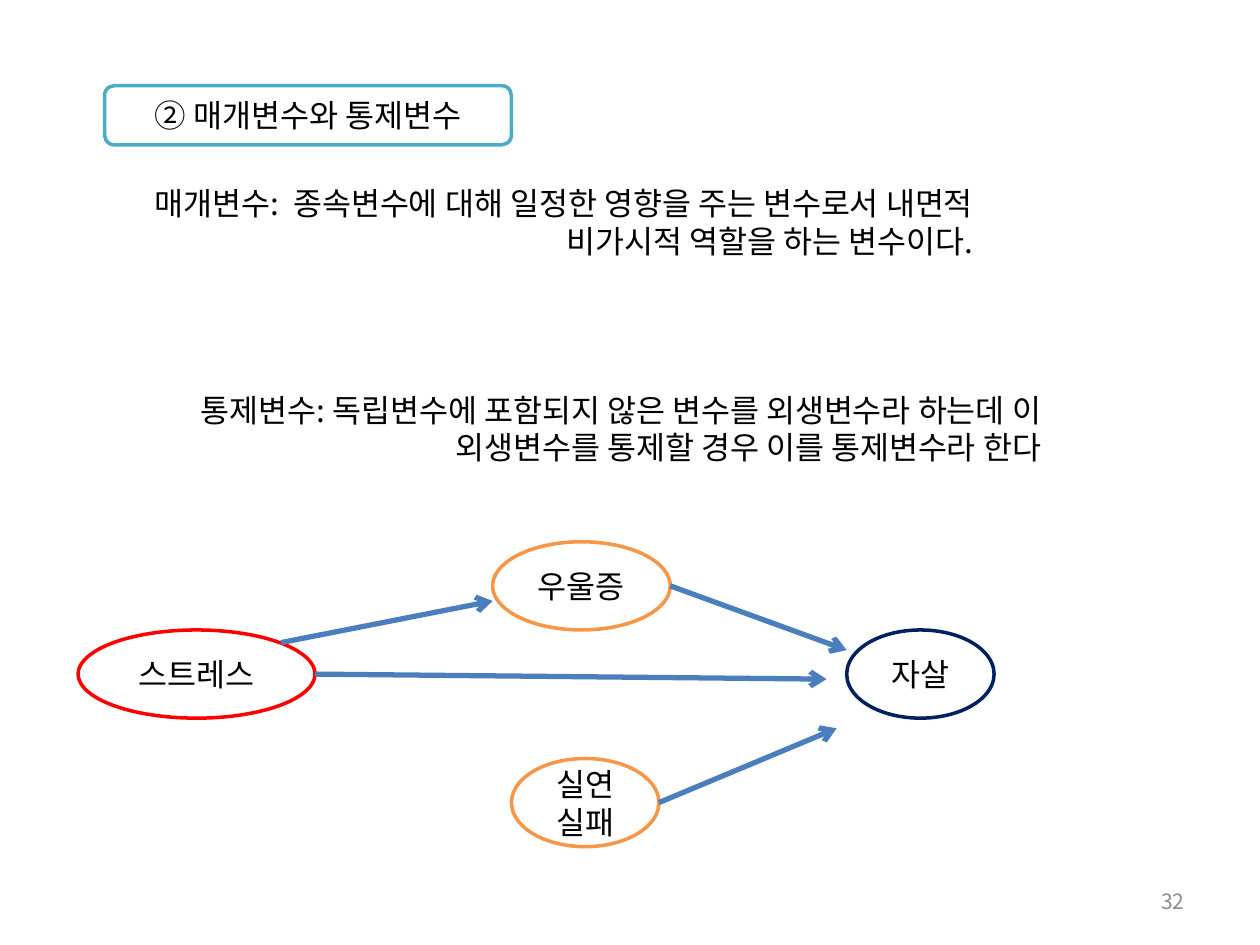
from dataclasses import dataclass

from lxml.etree import SubElement
from pptx import Presentation
from pptx.dml.color import RGBColor
from pptx.enum.shapes import MSO_CONNECTOR as Connector, MSO_SHAPE as Shape
from pptx.enum.text import MSO_ANCHOR as Anchor, PP_ALIGN as Align
from pptx.oxml.ns import qn
from pptx.util import Inches, Pt


@dataclass(frozen=True)
class Theme:
    font: str = "Noto Sans CJK KR"
    body_size: int = 18
    number_size: int = 12
    outline_width: int = 2
    arrow_width: int = 3
    text: str = "000000"
    muted: str = "8C8C8C"
    paper: str = "FFFFFF"
    teal: str = "4BACC6"
    orange: str = "F79646"
    red: str = "FF0000"
    navy: str = "002060"
    arrow: str = "4B7EBC"


THEME = Theme()


def color(value):
    return RGBColor.from_string(value)


def write(shape, text, align, anchor=Anchor.MIDDLE, size=THEME.body_size, ink=THEME.text):
    text_frame = shape.text_frame
    text_frame.word_wrap = True
    text_frame.vertical_anchor = anchor
    text_frame.text = text
    for paragraph in text_frame.paragraphs:
        paragraph.alignment = align
        for run in paragraph.runs:
            run.font.name = THEME.font
            run.font.size = Pt(size)
            run.font.color.rgb = color(ink)
            east_asian = SubElement(run.font._element, qn("a:ea"))
            east_asian.set("typeface", THEME.font)


def add_outlined(slide, kind, box, text, outline):
    shape = slide.shapes.add_shape(kind, *map(Inches, box))
    shape.shadow.inherit = False
    shape.fill.solid()
    shape.fill.fore_color.rgb = color(THEME.paper)
    shape.line.color.rgb = color(outline)
    shape.line.width = Pt(THEME.outline_width)
    write(shape, text, Align.CENTER)


def add_arrow(slide, start, end):
    connector = slide.shapes.add_connector(
        Connector.STRAIGHT, *map(Inches, start), *map(Inches, end))
    connector.line.color.rgb = color(THEME.arrow)
    connector.line.width = Pt(THEME.arrow_width)
    SubElement(connector.line._get_or_add_ln(), qn("a:tailEnd")).set("type", "arrow")
    SubElement(connector._element.spPr, qn("a:effectLst"))


def add_heading(slide, box):
    add_outlined(slide, Shape.ROUNDED_RECTANGLE, box, "② 매개변수와 통제변수", THEME.teal)


def add_definition(slide, box, text):
    textbox = slide.shapes.add_textbox(*map(Inches, box))
    write(textbox, text, Align.RIGHT, Anchor.TOP)


def add_page_number(slide, box, number):
    textbox = slide.shapes.add_textbox(*map(Inches, box))
    write(textbox, number, Align.RIGHT, size=THEME.number_size, ink=THEME.muted)


def add_causal_diagram(slide, box):
    left, top, width, height = box
    node_height = 0.7
    middle = top + node_height
    bottom = top + height - node_height
    right = left + width

    nodes = [
        ("우울증", left + 3.29, top, 1.41, THEME.orange),
        ("스트레스", left, middle, 1.88, THEME.red),
        ("자살", right - 1.17, middle, 1.17, THEME.navy),
        ("실연\n실패", left + 3.44, bottom, 1.17, THEME.orange),
    ]
    for text, x, y, node_width, outline in nodes:
        add_outlined(slide, Shape.OVAL, (x, y, node_width, node_height), text, outline)

    arrows = [
        ((1.61, 0.8), (3.29, 0.47)),
        ((4.7, 0.35), (6.1, 0.86)),
        ((1.88, 1.05), (5.94, 1.09)),
        ((4.61, 2.07), (6.02, 1.48)),
    ]
    for start, end in arrows:
        add_arrow(slide, *((left + x, top + y) for x, y in (start, end)))


def main():
    presentation = Presentation()
    presentation.slide_width = Inches(10)
    presentation.slide_height = Inches(7.5)
    slide = presentation.slides.add_slide(presentation.slide_layouts[6])

    add_page_number(slide, (7.17, 6.95, 2.33, 0.4), "32")
    add_heading(slide, (0.83, 0.68, 3.23, 0.47))
    add_definition(
        slide, (1.02, 1.41, 6.8, 0.71),
        "매개변수:  종속변수에 대해 일정한 영향을 주는 변수로서 내면적 비가시적 역할을 하는 변수이다.")
    add_definition(
        slide, (1.02, 3.05, 7.34, 0.71),
        "통제변수: 독립변수에 포함되지 않은 변수를 외생변수라 하는데 이 외생변수를 통제할 경우 이를 통제변수라 한다")
    add_causal_diagram(slide, (0.62, 4.3, 7.27, 2.42))

    presentation.save("out.pptx")


if __name__ == "__main__":
    main()
